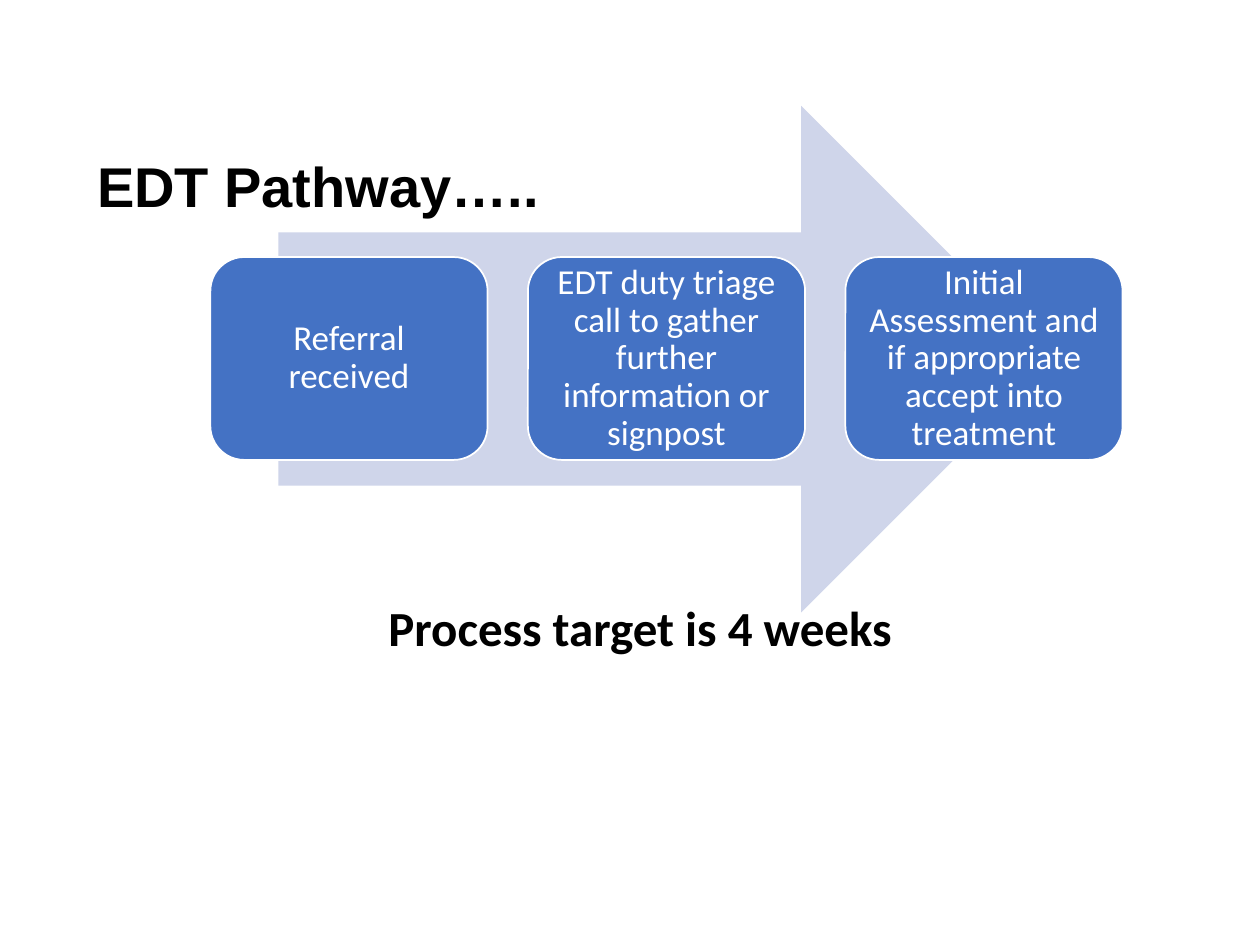
from dataclasses import dataclass

from pptx import Presentation
from pptx.dml.color import RGBColor as Rgb
from pptx.enum.shapes import MSO_SHAPE as Shape
from pptx.enum.text import MSO_ANCHOR as Anchor, PP_ALIGN as Align
from pptx.util import Inches, Pt


@dataclass(frozen=True)
class Theme:
    ink: Rgb = Rgb(0, 0, 0)
    paper: Rgb = Rgb(255, 255, 255)
    step: Rgb = Rgb(0x44, 0x72, 0xC4)
    arrow: Rgb = Rgb(0xCF, 0xD5, 0xEA)
    head: str = "Arial"
    body: str = "Calibri"
    title: int = 32
    target: int = 28
    label: int = 20


THEME = Theme()
STEPS = (
    "Referral received",
    "EDT duty triage call to gather further information or signpost",
    "Initial Assessment and if appropriate accept into treatment",
)
LEFT, PITCH = 1.67, 2.52


def style(para, face, size, color, bold=False, align=Align.CENTER):
    para.alignment = align
    font = para.font
    font.name, font.size, font.bold = face, Pt(size), bold
    font.color.rgb = color


def add_title(slide, text):
    title = slide.shapes.title
    title.left, title.top = Inches(0.67), Inches(1.15)
    title.width, title.height = Inches(7.72), Inches(0.64)
    frame = title.text_frame
    frame.text = text
    frame.vertical_anchor = Anchor.TOP
    style(frame.paragraphs[0], THEME.head, THEME.title, THEME.ink, True, Align.LEFT)


def add_block(slide, kind, box, fill):
    """Add a filled preset shape without line or shadow."""
    block = slide.shapes.add_shape(kind, *map(Inches, box))
    block.shadow.inherit = False
    block.fill.solid()
    block.fill.fore_color.rgb = fill
    block.line.fill.background()
    return block


def add_step(slide, left, text):
    block = add_block(slide, Shape.ROUNDED_RECTANGLE, (left, 2.04, 2.2, 1.61), THEME.step)
    block.line.color.rgb = THEME.paper
    block.line.width = Pt(1)
    frame = block.text_frame
    frame.text = text
    frame.word_wrap = True
    frame.vertical_anchor = Anchor.MIDDLE
    frame.margin_left = frame.margin_right = Inches(0.08)
    frame.margin_top = frame.margin_bottom = Inches(0.08)
    para = frame.paragraphs[0]
    para.line_spacing = 0.9
    style(para, THEME.body, THEME.label, THEME.paper)


def add_target(slide, text):
    box = slide.shapes.add_textbox(*map(Inches, (2.01, 4.69, 6.14, 0.57)))
    frame = box.text_frame
    frame.text = text
    frame.word_wrap = True
    style(frame.paragraphs[0], THEME.body, THEME.target, THEME.ink, True)


def main():
    deck = Presentation()
    deck.slide_width, deck.slide_height = Inches(10), Inches(7.5)
    slide = deck.slides.add_slide(deck.slide_layouts.get_by_name("Title Only"))
    add_title(slide, "EDT Pathway…..")
    add_block(slide, Shape.RIGHT_ARROW, (2.21, 0.84, 6.16, 4.02), THEME.arrow)
    for i, text in enumerate(STEPS):
        add_step(slide, LEFT + i * PITCH, text)
    add_target(slide, "Process target is 4 weeks")
    deck.save("out.pptx")


if __name__ == "__main__":
    main()
